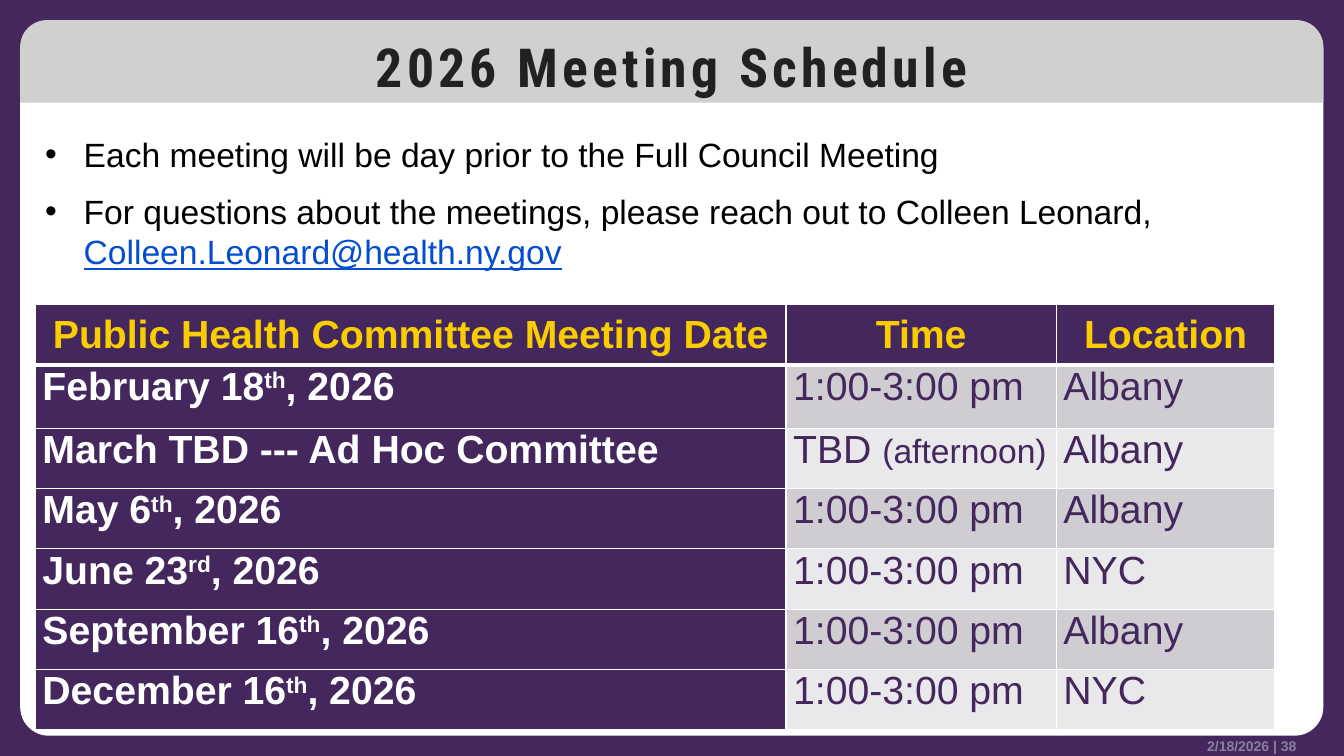
from lxml.etree import SubElement
from pptx import Presentation
from pptx.dml.color import RGBColor
from pptx.enum.shapes import MSO_SHAPE
from pptx.enum.text import MSO_ANCHOR, PP_ALIGN
from pptx.oxml import parse_xml
from pptx.oxml.ns import nsdecls, qn
from pptx.util import Cm, Pt

# Content: each text is a list of (words, style) runs
TITLE = "2026 Meeting Schedule"
FOOTER = "2/18/2026 | 38"
NOTES = [
    [("Each meeting will be day prior to the Full Council Meeting", "body")],
    [("For questions about the meetings, please reach out to Colleen Leonard, ", "body"),
     ("Colleen.Leonard@health.ny.gov", "mail")],
]
HEADS = ["Public Health Committee Meeting Date", "Time", "Location"]
HOURS = [("1:00-3:00 pm", "cell")]
LATER = [("TBD ", "cell"), ("(afternoon)", "small")]


def day(date, end):
    return [(date, "date"), (end, "raised"), (", 2026", "date")]


MEETINGS = [
    (day("February 18", "th"), HOURS, "Albany"),
    ([("March TBD --- Ad Hoc Committee", "date")], LATER, "Albany"),
    (day("May 6", "th"), HOURS, "Albany"),
    (day("June 23", "rd"), HOURS, "NYC"),
    (day("September 16", "th"), HOURS, "Albany"),
    (day("December 16", "th"), HOURS, "NYC"),
]

# Theme: colours, then type styles as (colour, font values, extra run values)
COLORS = {
    "purple": "43275D", "white": "FFFFFF", "band": "D0D0CE", "gold": "F9CD00",
    "ink": "212121", "black": "000000", "link": "044DD0", "muted": "8B7FA0",
    "odd": "CFCDD2", "even": "E9E8EA",
}
STYLES = {
    "title": ("ink", {"name": "Roboto Condensed", "size": Pt(38.4), "bold": True}, {"spc": "300"}),
    "foot": ("muted", {"size": Pt(10), "bold": True}, {}),
    "body": ("black", {"size": Pt(24)}, {}),
    "mail": ("link", {"size": Pt(24), "underline": True}, {}),
    "head": ("gold", {"size": Pt(28), "bold": True}, {}),
    "date": ("white", {"size": Pt(28), "bold": True}, {}),
    "raised": ("white", {"size": Pt(28), "bold": True}, {"baseline": "30000"}),
    "cell": ("purple", {"size": Pt(28)}, {}),
    "small": ("purple", {"size": Pt(24)}, {}),
}

# Layout in centimetres
EDGE, WIDE = 0.51, 32.84
COLS = [18.92, 6.81, 5.51]
ROWS = [1.52, 1.6] + [1.52] * 5


def tint(name):
    return RGBColor.from_string(COLORS[name])


def apply(part, values):
    for key, value in values.items():
        setattr(part, key, value)


def write(par, runs):
    for words, style in runs:
        color, values, extra = STYLES[style]
        run = par.add_run()
        run.text = words
        apply(run.font, {"name": "Arial", "bold": False} | values)
        run.font.color.rgb = tint(color)
        for key, value in extra.items():
            run.font._element.set(key, value)


def panel(slide, kind, color, tall, rounds):
    shape = slide.shapes.add_shape(kind, Cm(EDGE), Cm(EDGE), Cm(WIDE), Cm(tall))
    shape.shadow.inherit = False
    shape.fill.solid()
    shape.fill.fore_color.rgb = tint(color)
    shape.line.fill.background()
    for spot, value in enumerate(rounds):
        shape.adjustments[spot] = value


def textbox(slide, place, values):
    frame = slide.shapes.add_textbox(*map(Cm, place)).text_frame
    apply(frame, {"word_wrap": True} | values)
    return frame


def bullet(par):
    props = par._p.get_or_add_pPr()
    props.set("marL", str(Cm(0.97)))
    props.set("indent", str(-Cm(0.97)))
    hue = SubElement(props, qn("a:buClr"))
    SubElement(hue, qn("a:srgbClr"), val=COLORS["black"])
    SubElement(props, qn("a:buFont"), typeface="Arial")
    SubElement(props, qn("a:buChar"), char="•")
    par.space_after = Pt(12)


def border(cell, row):
    thick = {"L": 1, "R": 1, "T": 3 if row == 1 else 1, "B": 3 if row == 0 else 1}
    props = cell._tc.get_or_add_tcPr()
    for spot, (side, size) in enumerate(thick.items()):
        props.insert(spot, parse_xml(
            f'<a:ln{side} {nsdecls("a")} w="{Pt(size)}"><a:solidFill>'
            f'<a:srgbClr val="{COLORS["white"]}"/></a:solidFill></a:ln{side}>'))


def schedule(slide):
    table = slide.shapes.add_table(
        len(ROWS), len(COLS), Cm(0.89), Cm(7.67), Cm(sum(COLS)), Cm(sum(ROWS))).table
    for col, wide in zip(table.columns, COLS):
        col.width = Cm(wide)
    for row, tall in zip(table.rows, ROWS):
        row.height = Cm(tall)
    grid = [[[(head, "head")] for head in HEADS]]
    grid += [[date, time, [(town, "cell")]] for date, time, town in MEETINGS]
    for r, line in enumerate(grid):
        for c, runs in enumerate(line):
            cell = table.cell(r, c)
            apply(cell, {
                "margin_left": Cm(0.18), "margin_right": Cm(0.18),
                "margin_top": 0, "margin_bottom": 0,
                "vertical_anchor": MSO_ANCHOR.TOP if r else MSO_ANCHOR.MIDDLE})
            cell.fill.solid()
            dark = r == 0 or c == 0
            cell.fill.fore_color.rgb = tint("purple" if dark else "odd" if r % 2 else "even")
            border(cell, r)
            par = cell.text_frame.paragraphs[0]
            par.alignment = PP_ALIGN.LEFT if r else PP_ALIGN.CENTER
            write(par, runs)


def main():
    deck = Presentation()
    apply(deck, {"slide_width": Cm(33.87), "slide_height": Cm(19.05)})
    slide = deck.slides.add_slide(deck.slide_layouts[6])

    # Background and panels
    slide.background.fill.solid()
    slide.background.fill.fore_color.rgb = tint("purple")
    panel(slide, MSO_SHAPE.ROUNDED_RECTANGLE, "white", 18.03, [0.04])
    panel(slide, MSO_SHAPE.ROUND_2_SAME_RECTANGLE, "band", 2.08, [0.32, 0])

    # Footer and title
    flat = dict.fromkeys(["margin_left", "margin_right", "margin_top", "margin_bottom"], 0)
    foot = textbox(slide, (20.8, 18.57, 11.87, 0.43),
                   flat | {"vertical_anchor": MSO_ANCHOR.BOTTOM})
    title = textbox(slide, (EDGE, 0.66, WIDE, 1.96),
                    {"margin_top": Cm(0.18), "margin_bottom": Cm(0.18)})
    for frame, words, style, side in [(foot, FOOTER, "foot", PP_ALIGN.RIGHT),
                                      (title, TITLE, "title", PP_ALIGN.CENTER)]:
        par = frame.paragraphs[0]
        par.alignment = side
        write(par, [(words, style)])

    # Table and notes
    schedule(slide)
    notes = textbox(slide, (0.89, 3.25, 30.86, 3.76), {})
    for spot, runs in enumerate(NOTES):
        par = notes.add_paragraph() if spot else notes.paragraphs[0]
        bullet(par)
        write(par, runs)

    deck.save("out.pptx")


if __name__ == "__main__":
    main()
